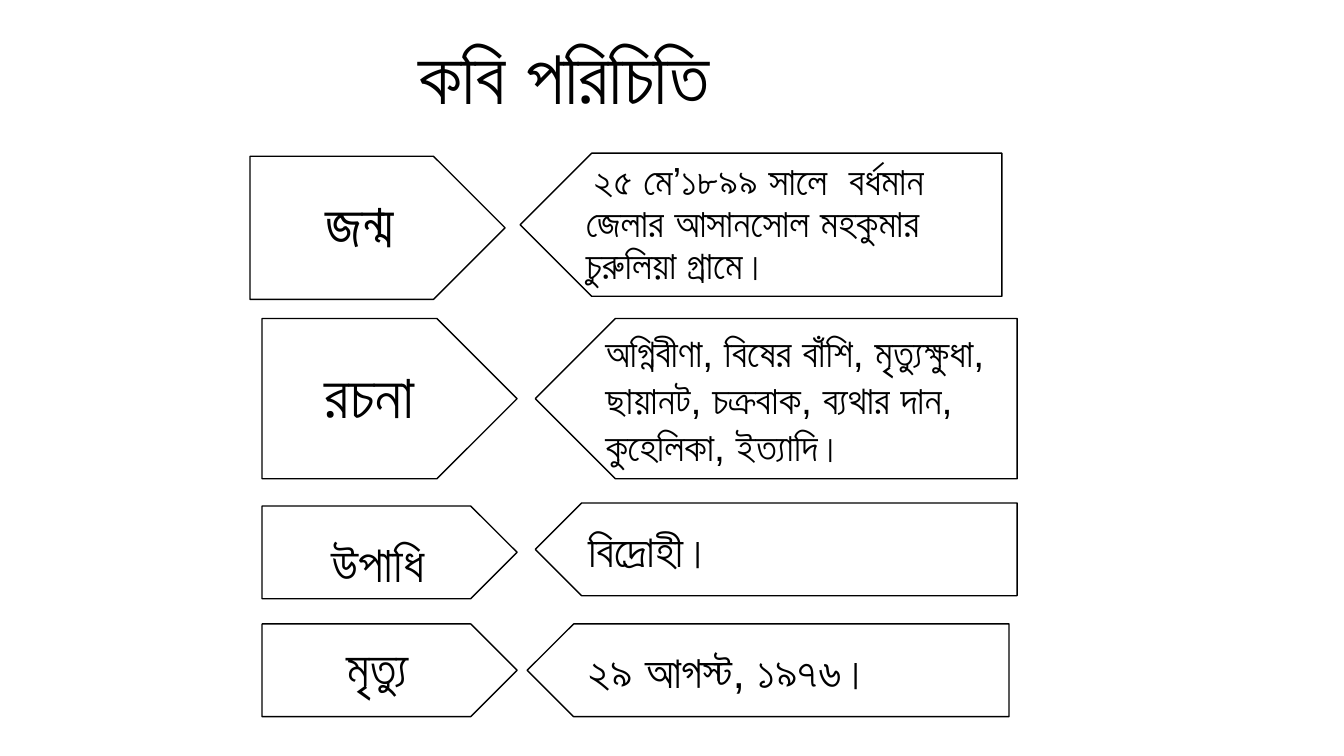
from dataclasses import dataclass

from lxml import etree
from pptx import Presentation
from pptx.dml.color import RGBColor
from pptx.enum.shapes import MSO_SHAPE
from pptx.enum.text import MSO_ANCHOR, MSO_AUTO_SIZE, PP_ALIGN
from pptx.oxml.ns import qn
from pptx.slide import Slide
from pptx.text.text import TextFrame
from pptx.util import Inches, Pt

BLACK = RGBColor(0x00, 0x00, 0x00)
WHITE = RGBColor(0xFF, 0xFF, 0xFF)
FONT = "Arial"
PENTAGON = MSO_SHAPE.PENTAGON
TOP, MIDDLE, BOTTOM = MSO_ANCHOR.TOP, MSO_ANCHOR.MIDDLE, MSO_ANCHOR.BOTTOM
LEFT, CENTER = PP_ALIGN.LEFT, PP_ALIGN.CENTER
GROW = MSO_AUTO_SIZE.SHAPE_TO_FIT_TEXT

SLIDE_WIDTH, SLIDE_HEIGHT = Inches(13.33), Inches(7.5)
TITLE_ONLY = 5
LABEL_WIDTH, DETAIL_WIDTH = 18.98, 35.85


@dataclass(frozen=True)
class Box:
    left: float
    top: float
    width: float
    height: float

    def emu(self) -> tuple[int, int, int, int]:
        return (
            round(SLIDE_WIDTH * self.left / 100),
            round(SLIDE_HEIGHT * self.top / 100),
            round(SLIDE_WIDTH * self.width / 100),
            round(SLIDE_HEIGHT * self.height / 100),
        )


@dataclass(frozen=True)
class Fact:
    label: str
    detail: str
    label_left: float
    label_top: float
    detail_left: float
    detail_top: float
    height: float
    label_size: int
    detail_size: int
    indent: float = 0.2
    first_line: float = 0
    detail_spacing: float = 1.0
    label_bold: bool = True
    label_anchor: MSO_ANCHOR = MIDDLE
    label_before: int = 0


FACTS = (
    Fact("জন্ম", "২৫ মে’১৮৯৯ সালে  বর্ধমান জেলার আসানসোল মহকুমার চুরুলিয়া গ্রামে।",
         18.6, 20.67, 38.7, 20.27, 18.93, 44, 28,
         first_line=0.08, detail_spacing=0.9, label_bold=False),
    Fact("রচনা", "অগ্নিবীণা, বিষের বাঁশি, মৃত্যুক্ষুধা, ছায়ানট, চক্রবাক, ব্যথার দান, কুহেলিকা, ইত্যাদি।",
         19.5, 42.13, 39.83, 42.13, 21.2, 44, 28),
    Fact("উপাধি", "বিদ্রোহী।",
         19.5, 66.93, 39.83, 66.53, 12.27, 36, 32,
         label_anchor=BOTTOM, label_before=6),
    Fact("মৃত্যু", "২৯ আগস্ট, ১৯৭৬।",
         19.5, 82.53, 39.23, 82.53, 12.27, 36, 32, indent=0.28),
)


def write(frame: TextFrame, text: str, *, size: int, bold: bool = False,
          align: PP_ALIGN = LEFT, anchor: MSO_ANCHOR = MIDDLE,
          spacing: float = 1.0, before: int = 0, indent: float = 0,
          first_line: float = 0, wrap: bool = True) -> None:
    frame.word_wrap = wrap
    frame.vertical_anchor = anchor
    paragraph = frame.paragraphs[0]
    paragraph.alignment = align
    paragraph.line_spacing = spacing
    paragraph.space_before = Pt(before)
    properties = paragraph._p.get_or_add_pPr()
    properties.set("marL", str(Inches(indent)))
    properties.set("indent", str(Inches(first_line)))
    run = paragraph.add_run()
    run.text = text
    run.font.name = FONT
    run.font.size = Pt(size)
    run.font.bold = bold
    run.font.color.rgb = BLACK
    complex_script = etree.SubElement(run._r.get_or_add_rPr(), qn("a:cs"))
    complex_script.set("typeface", FONT)


def add_arrow_box(slide: Slide, box: Box, *, points_left: bool = False) -> TextFrame:
    arrow_box = slide.shapes.add_shape(PENTAGON, *box.emu())
    arrow_box.shadow.inherit = False
    arrow_box.fill.solid()
    arrow_box.fill.fore_color.rgb = WHITE
    arrow_box.line.color.rgb = BLACK
    arrow_box.line.width = Pt(1)
    if points_left:
        arrow_box._element.spPr.find(qn("a:xfrm")).set("flipH", "1")
    return arrow_box.text_frame


def add_heading(slide: Slide, text: str) -> None:
    heading = slide.shapes.title
    heading.left, heading.top, heading.width, heading.height = Box(30.38, 3.2, 25.13, 13.47).emu()
    write(heading.text_frame, text, size=54, anchor=TOP, wrap=False)
    heading.text_frame.auto_size = GROW


def add_fact(slide: Slide, fact: Fact) -> None:
    label = add_arrow_box(slide, Box(fact.label_left, fact.label_top, LABEL_WIDTH, fact.height))
    write(label, fact.label, size=fact.label_size, bold=fact.label_bold, align=CENTER,
          anchor=fact.label_anchor, spacing=0.9, before=fact.label_before)
    detail = add_arrow_box(slide, Box(fact.detail_left, fact.detail_top, DETAIL_WIDTH, fact.height),
                           points_left=True)
    write(detail, fact.detail, size=fact.detail_size, spacing=fact.detail_spacing,
          indent=fact.indent, first_line=fact.first_line)


def main() -> None:
    presentation = Presentation()
    presentation.slide_width, presentation.slide_height = SLIDE_WIDTH, SLIDE_HEIGHT
    slide = presentation.slides.add_slide(presentation.slide_layouts[TITLE_ONLY])
    add_heading(slide, "কবি পরিচিতি")
    for fact in FACTS:
        add_fact(slide, fact)
    presentation.save("out.pptx")


if __name__ == "__main__":
    main()
